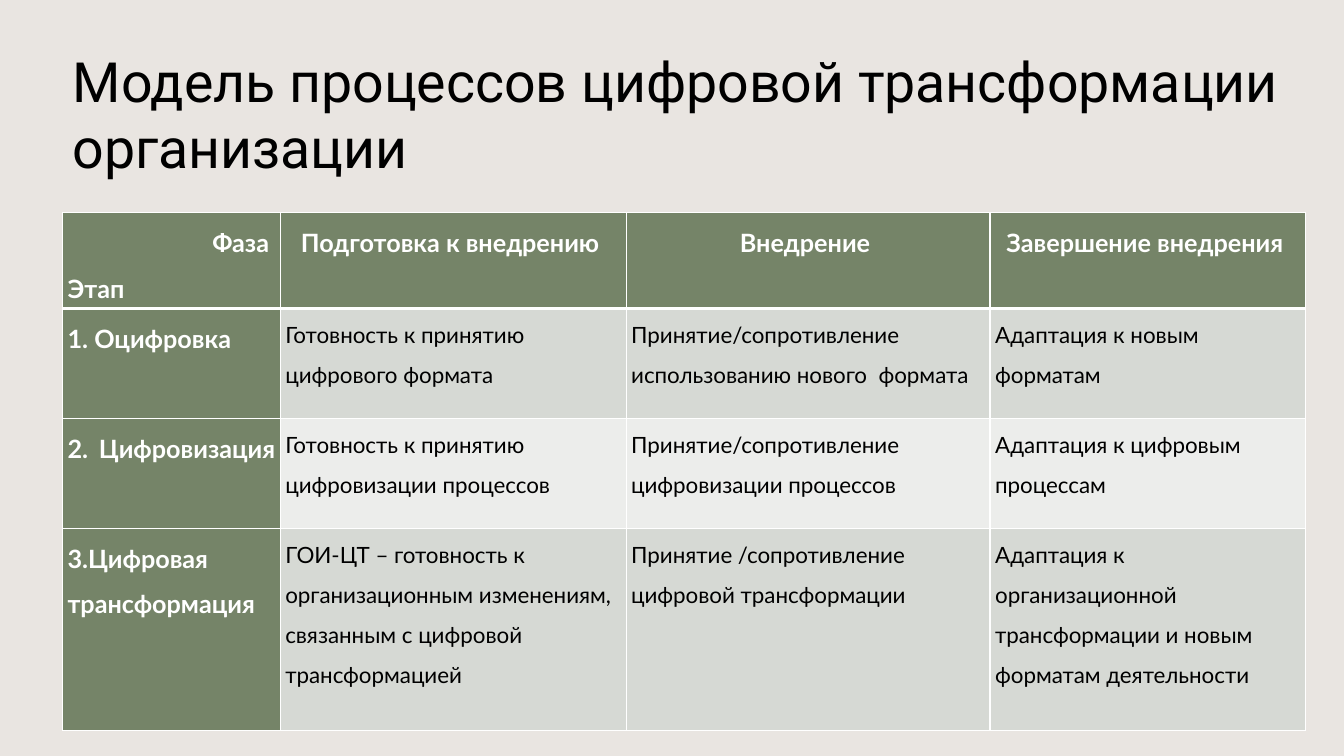
from lxml import etree
from pptx import Presentation
from pptx.dml.color import RGBColor
from pptx.enum.text import MSO_ANCHOR, MSO_AUTO_SIZE, PP_ALIGN
from pptx.oxml.ns import qn
from pptx.util import Inches, Pt

LEFT, RIGHT = PP_ALIGN.LEFT, PP_ALIGN.RIGHT
CENTER, JUST = PP_ALIGN.CENTER, PP_ALIGN.JUSTIFY
TOP, MIDDLE = MSO_ANCHOR.TOP, MSO_ANCHOR.MIDDLE
NO_FIT = MSO_AUTO_SIZE.NONE

COLORS = {
    "back": "E9E5E1",
    "head": "758468",
    "odd": "D6D9D4",
    "even": "ECEDEB",
    "white": "FFFFFF",
    "black": "000000",
}
WIDTHS = [2.16, 3.43, 3.61, 3.13]
HEIGHTS = [0.95, 1.09, 1.09, 2.01]
PHASES = ["Подготовка к внедрению ", "Внедрение ", "Завершение внедрения "]
STAGES = [
    ("1. Оцифровка ",
     "Готовность к принятию цифрового формата",
     "Принятие/сопротивление использованию нового  формата",
     "Адаптация к новым форматам"),
    ("2. Цифровизация ",
     "Готовность к принятию цифровизации процессов",
     "Принятие/сопротивление цифровизации процессов",
     "Адаптация к цифровым процессам"),
    ("3.Цифровая трансформация ",
     "ГОИ-ЦТ – готовность к организационным изменениям, "
     "связанным с цифровой трансформацией",
     "Принятие /сопротивление цифровой трансформации",
     "Адаптация к организационной трансформации и новым форматам деятельности"),
]


def color(name):
    return RGBColor.from_string(COLORS[name])


def add_run(para, text, face, size, tint, bold=False):
    run = para.add_run()
    run.text = text
    run.font.name = face
    run.font.size = Pt(size)
    run.font.bold = bold
    run.font.color.rgb = color(tint)


def add_title(slide, text):
    title = slide.shapes.title
    title.left, title.top = Inches(0.62), Inches(0.4)
    title.width, title.height = Inches(12.33), Inches(1.45)
    frame = title.text_frame
    frame.word_wrap = True
    frame.auto_size = NO_FIT
    frame.vertical_anchor = MIDDLE
    para = frame.paragraphs[0]
    para.alignment = LEFT
    add_run(para, text, "Roboto", 39.6, "black")


def set_edges(cell, top, base):
    props = cell._tc.get_or_add_tcPr()
    edges = [("a:lnL", 1), ("a:lnR", 1), ("a:lnT", top), ("a:lnB", base)]
    for spot, (tag, width) in enumerate(edges):
        line = etree.Element(qn(tag), w=str(Pt(width)))
        fill = etree.SubElement(line, qn("a:solidFill"))
        etree.SubElement(fill, qn("a:srgbClr"), val=COLORS["white"])
        props.insert(spot, line)


def fill_cell(cell, lines, fill, size, tint, bold):
    cell.fill.solid()
    cell.fill.fore_color.rgb = color(fill)
    cell.margin_left = cell.margin_right = Inches(0.05)
    cell.margin_top = cell.margin_bottom = 0
    cell.vertical_anchor = TOP
    frame = cell.text_frame
    for spot, (text, align) in enumerate(lines):
        para = frame.add_paragraph() if spot else frame.paragraphs[0]
        para.alignment = align
        para.line_spacing = 1.5
        add_run(para, text, "Lato", size, tint, bold)


def add_grid(slide):
    frame = slide.shapes.add_table(
        len(HEIGHTS), len(WIDTHS), Inches(0.62), Inches(2.11),
        Inches(sum(WIDTHS)), Inches(sum(HEIGHTS)))
    table = frame.table
    table.first_col = True
    for col, width in zip(table.columns, WIDTHS):
        col.width = Inches(width)
    for row, height in zip(table.rows, HEIGHTS):
        row.height = Inches(height)

    corner = [("Фаза ", RIGHT), ("Этап ", JUST)]
    rows = [[corner] + [[(text, CENTER)] for text in PHASES]]
    for stage, *notes in STAGES:
        rows.append([[(stage, JUST)]] + [[(text, LEFT)] for text in notes])

    for r, row in enumerate(rows):
        for c, lines in enumerate(row):
            cell = table.cell(r, c)
            if r == 0 or c == 0:
                fill_cell(cell, lines, "head", 18, "white", True)
            else:
                band = "odd" if r % 2 else "even"
                fill_cell(cell, lines, band, 16, "black", False)
            set_edges(cell, 3 if r == 1 else 1, 3 if r == 0 else 1)


def main():
    deck = Presentation()
    deck.slide_width, deck.slide_height = Inches(13.33), Inches(7.5)
    slide = deck.slides.add_slide(deck.slide_layouts[5])
    slide.background.fill.solid()
    slide.background.fill.fore_color.rgb = color("back")
    add_title(slide, "Модель процессов цифровой трансформации организации")
    add_grid(slide)
    deck.save("out.pptx")


if __name__ == "__main__":
    main()
